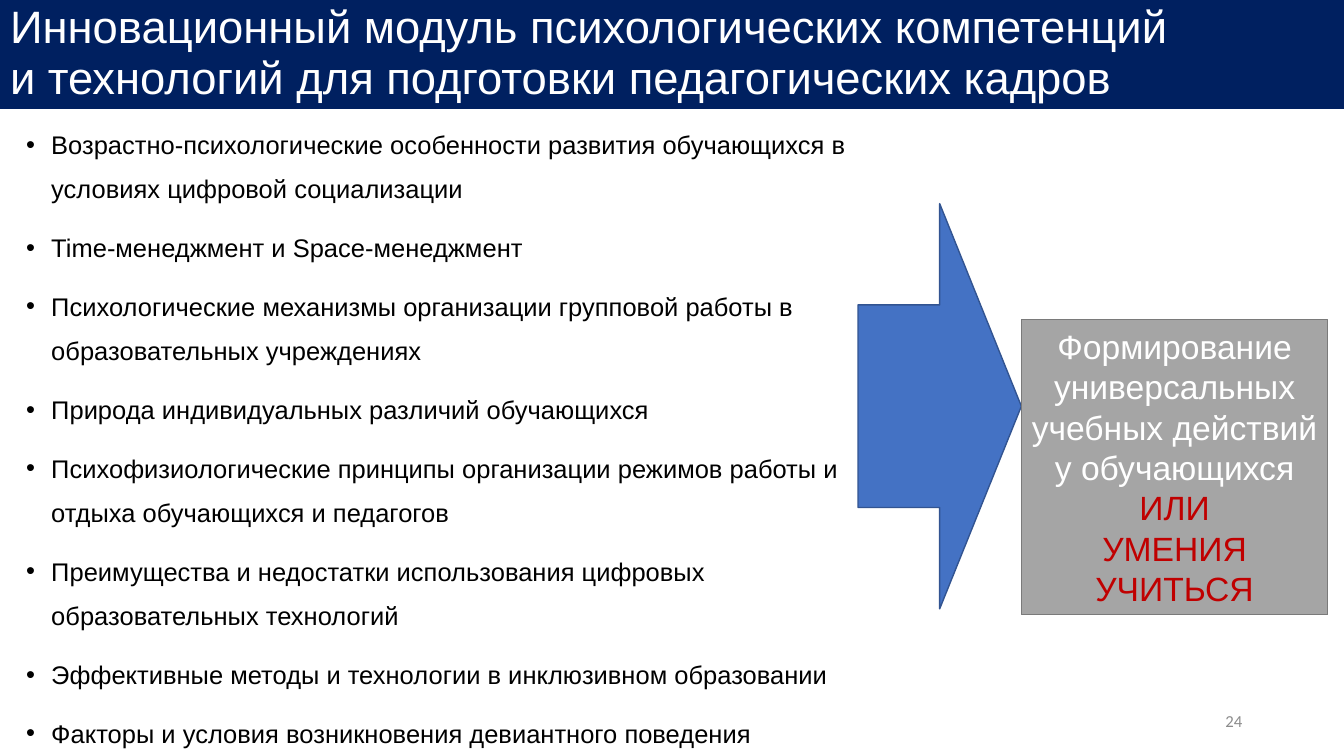
from pptx import Presentation
from pptx.dml.color import RGBColor
from pptx.enum.shapes import MSO_SHAPE
from pptx.enum.text import MSO_ANCHOR, MSO_AUTO_SIZE, PP_ALIGN
from pptx.oxml.ns import qn
from pptx.util import Inches, Pt

# Content
TITLE = ("Инновационный модуль психологических компетенций \v"
         "и технологий для подготовки педагогических кадров")
TOPICS = [
    "Возрастно-психологические особенности развития обучающихся в условиях цифровой социализации",
    "Time-менеджмент и Space-менеджмент",
    "Психологические механизмы организации групповой работы в образовательных учреждениях",
    "Природа индивидуальных различий обучающихся",
    "Психофизиологические принципы организации режимов работы и отдыха обучающихся и педагогов",
    "Преимущества и недостатки использования цифровых образовательных технологий",
    "Эффективные методы и технологии в инклюзивном образовании",
    "Факторы и условия возникновения девиантного поведения",
]
RESULT = [
    ("Формирование универсальных учебных действий у обучающихся", "white"),
    ("ИЛИ", "accent"),
    ("УМЕНИЯ УЧИТЬСЯ", "accent"),
]
PAGE_NUMBER = "24"

THEME = {
    "font": "Arial", "number_font": "Calibri",
    "title_size": 32.4, "topic_size": 18.2, "result_size": 24, "number_size": 12,
    "navy": "002060", "white": "FFFFFF", "black": "000000", "accent": "C00000",
    "arrow": "4472C4", "arrow_line": "325491",
    "box": "A5A5A5", "box_line": "7A7A7A", "number": "8C8C8C",
}

# Places: left, top, width, height
TITLE_AREA = (0, -0.02, 13.33, 1.1)
TOPICS_AREA = (0.16, 1.09, 8.35, 6.41)
ARROW_AREA = (8.51, 2.02, 1.62, 4.02)
RESULT_AREA = (10.13, 3.17, 3.04, 2.93)
NUMBER_AREA = (9.42, 6.95, 3, 0.4)


def color(name):
    return RGBColor.from_string(THEME[name])


def area(box):
    return [Inches(length) for length in box]


def fill_text(text_frame, lines, size, font="font", align=PP_ALIGN.LEFT,
              anchor=MSO_ANCHOR.TOP):
    """Write (text, colour) lines, one paragraph each."""
    text_frame.text = "\n".join(text for text, _ in lines)
    text_frame.word_wrap = True
    text_frame.auto_size = MSO_AUTO_SIZE.NONE
    text_frame.vertical_anchor = anchor
    for paragraph, (_, color_name) in zip(text_frame.paragraphs, lines):
        paragraph.alignment = align
        for run in paragraph.runs:
            run.font.name = THEME[font]
            run.font.size = Pt(THEME[size])
            run.font.color.rgb = color(color_name)


def add_block(slide, kind, box, name):
    shape = slide.shapes.add_shape(kind, *area(box))
    shape.shadow.inherit = False
    shape.fill.solid()
    shape.fill.fore_color.rgb = color(name)
    shape.line.color.rgb = color(name + "_line")
    shape.line.width = Pt(1)
    return shape


def add_bullet(paragraph):
    properties = paragraph._p.get_or_add_pPr()
    properties.set("marL", str(Inches(0.25)))
    properties.set("indent", str(-Inches(0.25)))
    font = properties.makeelement(qn("a:buFont"), {"typeface": THEME["font"]})
    bullet = properties.makeelement(qn("a:buChar"), {"char": "•"})
    properties.extend([font, bullet])


def main():
    presentation = Presentation()
    presentation.slide_width = Inches(13.33)
    presentation.slide_height = Inches(7.5)
    slide = presentation.slides.add_slide(presentation.slide_layouts[5])

    # Title band
    title = slide.shapes.title
    title.left, title.top, title.width, title.height = area(TITLE_AREA)
    title.fill.solid()
    title.fill.fore_color.rgb = color("navy")
    fill_text(title.text_frame, [(TITLE, "white")], "title_size",
              anchor=MSO_ANCHOR.MIDDLE)
    title.text_frame.paragraphs[0].line_spacing = 0.94

    # Module topics
    topics = slide.shapes.add_textbox(*area(TOPICS_AREA)).text_frame
    fill_text(topics, [(topic, "black") for topic in TOPICS], "topic_size")
    for paragraph in topics.paragraphs:
        paragraph.line_spacing = 1.46
        paragraph.space_before = Pt(10)
        add_bullet(paragraph)

    # Arrow and result
    add_block(slide, MSO_SHAPE.RIGHT_ARROW, ARROW_AREA, "arrow")
    result = add_block(slide, MSO_SHAPE.RECTANGLE, RESULT_AREA, "box")
    fill_text(result.text_frame, RESULT, "result_size", align=PP_ALIGN.CENTER,
              anchor=MSO_ANCHOR.MIDDLE)

    # Page number
    number = slide.shapes.add_textbox(*area(NUMBER_AREA))
    fill_text(number.text_frame, [(PAGE_NUMBER, "number")], "number_size",
              "number_font", PP_ALIGN.RIGHT, MSO_ANCHOR.MIDDLE)

    presentation.save("out.pptx")


if __name__ == "__main__":
    main()
